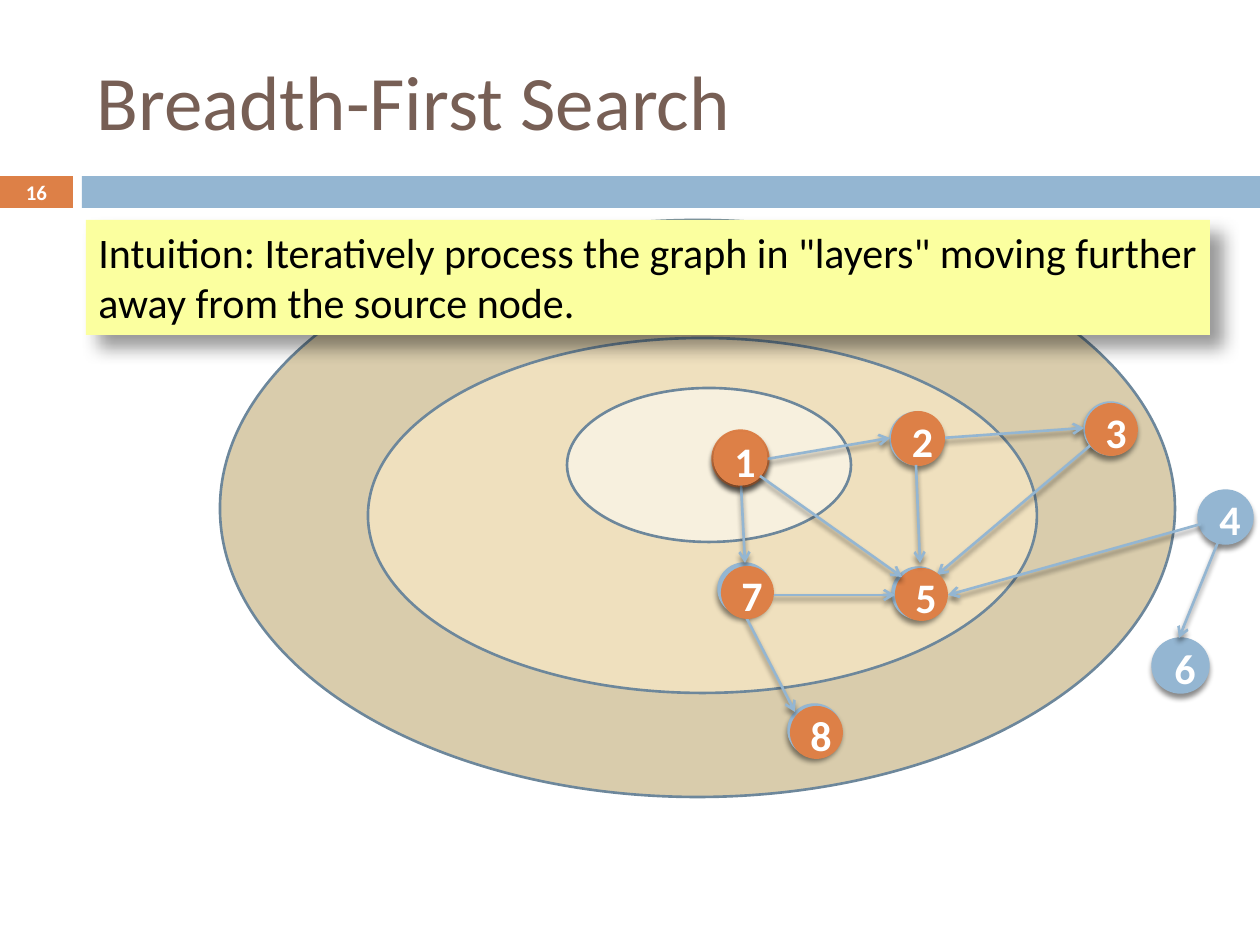
import lxml.etree
import pptx
import pptx.dml.color
import pptx.enum.shapes
import pptx.enum.text
import pptx.oxml.ns
import pptx.util

EMU_PER_PX = 914400 / 126
FONT = "Calibri"
COLORS = {
    "orange": "DD8047",
    "blue": "94B6D2",
    "outline": "6D879B",
    "outer": "D9CCAC",
    "middle": "EFE0BE",
    "inner": "F7F0DE",
    "title": "775F55",
    "note": "FBFF9F",
    "black": "000000",
    "white": "FFFFFF",
}
SOFT_SHADOW = (45, 3, 2.4, 90)
NOTE_SHADOW = (40, 10, 10, 45)
SHAPES = pptx.enum.shapes.MSO_SHAPE
ALIGN = pptx.enum.text.PP_ALIGN
ANCHOR = pptx.enum.text.MSO_ANCHOR

LAYERS = [
    ("outer", (220, 220, 955, 577)),
    ("middle", (368, 338, 669, 355)),
    ("inner", (567, 388, 284, 154)),
]
GRAPH_NODES = [
    ("1", (714, 432, 53, 53)),
    ("7", (718, 563, 53, 52)),
    ("2", (890, 412, 54, 53)),
    ("5", (892, 567, 53, 52)),
    ("3", (1084, 402, 53, 53)),
    ("4", (1198, 490, 55, 54)),
    ("6", (1152, 638, 57, 55)),
    ("8", (788, 704, 53, 52)),
]
VISITED_NODES = [
    ("2", (891, 411, 54, 55)),
    ("3", (1085, 403, 53, 53)),
    ("5", (895, 568, 53, 53)),
    ("7", (721, 566, 53, 53)),
    ("8", (790, 706, 53, 53)),
]
GRAPH_EDGES = [
    (741, 484, 745, 563),
    (767, 459, 890, 438),
    (942, 438, 1084, 428),
    (1092, 444, 937, 575),
    (1201, 524, 948, 595),
    (1218, 542, 1179, 638),
    (772, 595, 895, 595),
    (745, 615, 795, 712),
]
FRONT_EDGES = [
    (760, 476, 902, 577),
    (916, 465, 920, 563),
]


def px(length):
    return pptx.util.Emu(round(length * EMU_PER_PX))


def rgb(name):
    return pptx.dml.color.RGBColor.from_string(COLORS[name])


def add_child(parent, tag, **attributes):
    child = lxml.etree.SubElement(parent, pptx.oxml.ns.qn(tag))
    for key, value in attributes.items():
        child.set(key, str(value))
    return child


def set_effects(shape, shadow):
    properties = shape._element.spPr
    effects = properties.find(pptx.oxml.ns.qn("a:effectLst"))
    if effects is None:
        effects = add_child(properties, "a:effectLst")
    if shadow:
        opacity, blur, distance, angle = shadow
        outer = add_child(
            effects, "a:outerShdw", blurRad=pptx.util.Pt(blur),
            dist=pptx.util.Pt(distance), dir=angle * 60000, rotWithShape=0)
        color = add_child(outer, "a:srgbClr", val=COLORS["black"])
        add_child(color, "a:alpha", val=opacity * 1000)


def add_block(page, kind, place, fill, line=None, width=1.5, shadow=None):
    shape = page.shapes.add_shape(kind, *map(px, place))
    shape.fill.solid()
    shape.fill.fore_color.rgb = rgb(fill)
    if line:
        shape.line.color.rgb = rgb(line)
        shape.line.width = pptx.util.Pt(width)
    else:
        shape.line.fill.background()
    shape.shadow.inherit = False
    set_effects(shape, shadow)
    return shape


def write(shape, text, size, color, bold=False, align=ALIGN.LEFT, anchor=ANCHOR.MIDDLE):
    frame = shape.text_frame
    frame.text = text
    frame.word_wrap = True
    frame.vertical_anchor = anchor
    para = frame.paragraphs[0]
    para.alignment = align
    font = para.runs[0].font
    font.name = FONT
    font.size = pptx.util.Pt(size)
    font.bold = bold
    font.color.rgb = rgb(color)


def set_margins(frame, left=0, top=0):
    frame.margin_left = px(left)
    frame.margin_top = px(top)
    frame.margin_right = frame.margin_bottom = 0


def add_node(page, number, place, fill, line=None, width=0.79, shadow=None):
    node = add_block(page, SHAPES.OVAL, place, fill, line, width, shadow)
    write(node, number, 24, "white", True, ALIGN.CENTER)
    set_margins(node.text_frame, 9, 4)
    node.text_frame.word_wrap = False


def add_edge(page, ends):
    edge = page.shapes.add_connector(
        pptx.enum.shapes.MSO_CONNECTOR.STRAIGHT, *map(px, ends))
    edge.line.color.rgb = rgb("blue")
    edge.line.width = pptx.util.Pt(1.5)
    add_child(edge.get_or_add_ln(), "a:tailEnd", type="arrow")
    set_effects(edge, SOFT_SHADOW)


def add_header(page):
    add_block(page, SHAPES.RECTANGLE, (0, 176, 73, 32), "orange")
    add_block(page, SHAPES.RECTANGLE, (82, 176, 1178, 32), "blue")
    title = page.shapes.title
    title.left, title.top, title.width, title.height = map(px, (84, 32, 1124, 136))
    write(title, "Breadth-First Search", 44, "title")
    box = page.shapes.add_textbox(*map(px, (0, 175, 73, 34)))
    write(box, "16", 11.9, "white", True, ALIGN.CENTER)
    set_margins(box.text_frame)


def add_note(page):
    note = add_block(page, SHAPES.RECTANGLE, (86, 220, 1124, 115), "note", shadow=NOTE_SHADOW)
    write(note, 'Intuition: Iteratively process the graph in "layers" moving further '
          "away from the source node.", 24, "black", anchor=ANCHOR.TOP)
    note.text_frame.auto_size = pptx.enum.text.MSO_AUTO_SIZE.SHAPE_TO_FIT_TEXT


def add_graph(page):
    for number, place in GRAPH_NODES:
        line, width = ("orange", 3) if number == "1" else ("blue", 0.79)
        add_node(page, number, place, "blue", line, width, SOFT_SHADOW)
    for ends in GRAPH_EDGES:
        add_edge(page, ends)
    add_node(page, *GRAPH_NODES[0], "orange", "orange", shadow=SOFT_SHADOW)
    for number, place in VISITED_NODES:
        add_node(page, number, place, "orange")
    for ends in FRONT_EDGES:
        add_edge(page, ends)


def main():
    deck = pptx.Presentation()
    deck.slide_width, deck.slide_height = px(1260), px(945)
    page = deck.slides.add_slide(deck.slide_layouts[5])
    add_header(page)
    for fill, place in LAYERS:
        add_block(page, SHAPES.OVAL, place, fill, "outline")
    add_note(page)
    add_graph(page)
    deck.save("out.pptx")


if __name__ == "__main__":
    main()
